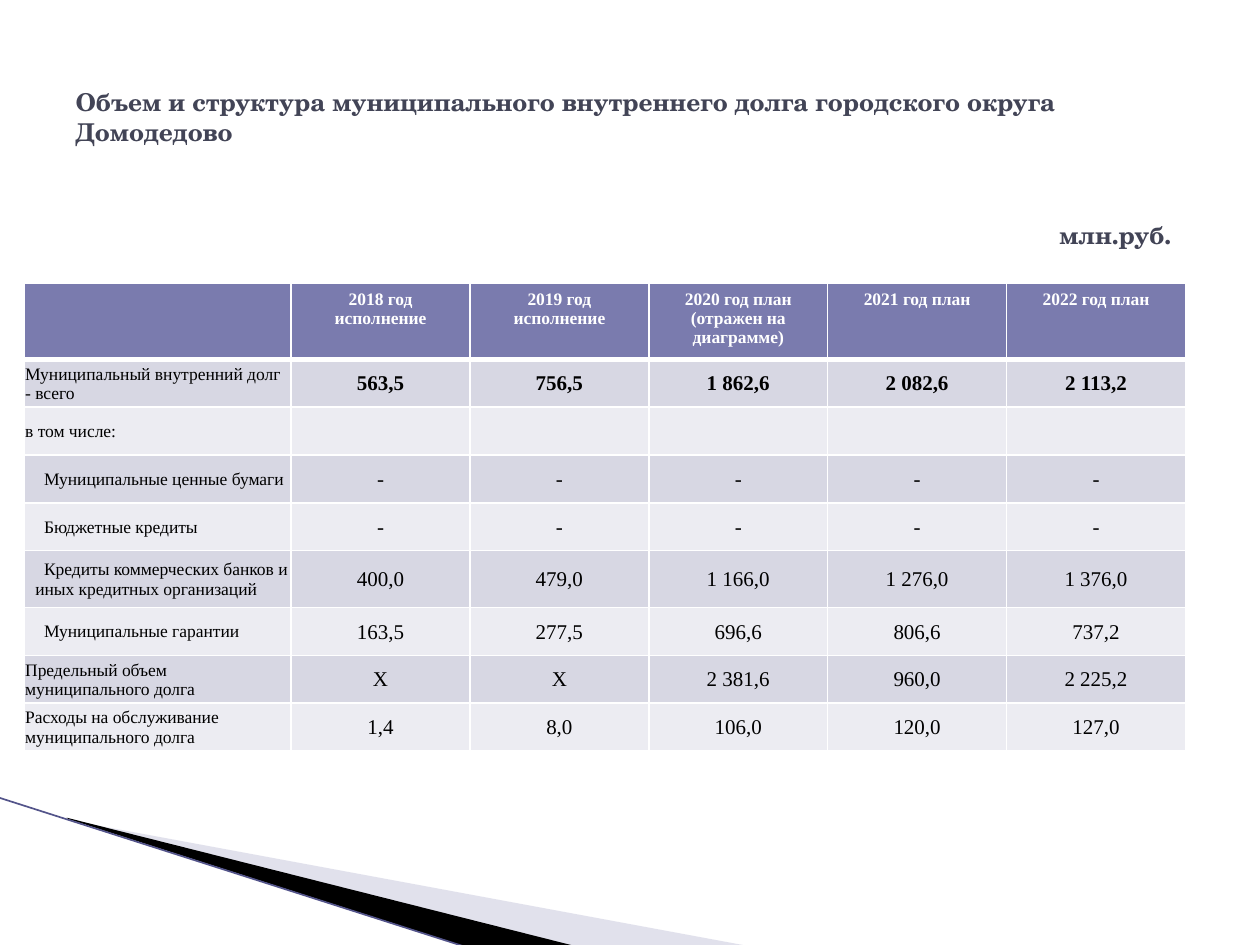
"""Build the slide on the municipal debt of the Domodedovo urban district."""
from dataclasses import dataclass

from lxml import etree
from pptx import Presentation
from pptx.dml.color import RGBColor
from pptx.enum.shapes import MSO_CONNECTOR
from pptx.enum.text import MSO_ANCHOR, MSO_AUTO_SIZE, PP_ALIGN
from pptx.oxml.ns import qn
from pptx.slide import Slide
from pptx.table import _Cell
from pptx.text.text import TextFrame
from pptx.util import Inches, Pt

LEFT, CENTER = PP_ALIGN.LEFT, PP_ALIGN.CENTER
TOP, MIDDLE = MSO_ANCHOR.TOP, MSO_ANCHOR.MIDDLE
NO_AUTOFIT, FIT_SHAPE = MSO_AUTO_SIZE.NONE, MSO_AUTO_SIZE.SHAPE_TO_FIT_TEXT
STRAIGHT = MSO_CONNECTOR.STRAIGHT

WHITE = RGBColor(0xFF, 0xFF, 0xFF)
BLACK = RGBColor(0x00, 0x00, 0x00)
SLATE = RGBColor(0x42, 0x44, 0x56)
HEADER = RGBColor(0x7A, 0x7B, 0xAE)
BANDS = (RGBColor(0xD7, 0xD7, 0xE3), RGBColor(0xEC, 0xEC, 0xF2))
LAVENDER = RGBColor(0xB6, 0xB6, 0xD1)
EDGE = RGBColor(0x53, 0x54, 0x8A)

HEADING_FONT, TABLE_FONT = "TeX Gyre Schola", "Times New Roman"
HEADING = {"name": HEADING_FONT, "size": Pt(14), "bold": True}
COLUMN_HEAD = {"name": TABLE_FONT, "size": Pt(10), "bold": True}
LABEL = {"name": TABLE_FONT, "size": Pt(10), "bold": False}
VALUE = {"name": TABLE_FONT, "size": Pt(12), "bold": False}
TOTAL = {"name": TABLE_FONT, "size": Pt(12), "bold": True}


@dataclass(frozen=True)
class DebtRow:
    label: str
    values: tuple[str, ...]
    indented: bool = False
    total: bool = False
    height: float = 0.38


@dataclass(frozen=True)
class Wedge:
    points: tuple[tuple[float, float], ...]
    color: RGBColor
    opacity: int = 100


YEARS = (
    "2018 год\nисполнение",
    "2019 год\nисполнение",
    "2020 год план\n(отражен на диаграмме)",
    "2021 год план",
    "2022 год план",
)
ROWS = (
    DebtRow("Муниципальный внутренний долг - всего",
            ("563,5", "756,5", "1 862,6", "2 082,6", "2 113,2"), total=True),
    DebtRow("в том числе:", ("",) * 5),
    DebtRow("Муниципальные ценные бумаги", ("-",) * 5, indented=True),
    DebtRow("Бюджетные кредиты", ("-",) * 5, indented=True),
    DebtRow("Кредиты коммерческих банков и иных кредитных организаций",
            ("400,0", "479,0", "1 166,0", "1 276,0", "1 376,0"), indented=True, height=0.45),
    DebtRow("Муниципальные гарантии",
            ("163,5", "277,5", "696,6", "806,6", "737,2"), indented=True),
    DebtRow("Предельный объем муниципального долга",
            ("X", "X", "2 381,6", "960,0", "2 225,2")),
    DebtRow("Расходы на обслуживание муниципального долга",
            ("1,4", "8,0", "106,0", "120,0", "127,0")),
)
HEADER_HEIGHT = 0.58
COLUMN_WIDTHS = (2.12,) + (1.42,) * len(YEARS)
WEDGES = (
    Wedge(((0.55, 6.51), (5.95, 7.51), (4.56, 7.51), (0.55, 6.5)), LAVENDER, 40),
    Wedge(((0.53, 6.49), (4.57, 7.51), (3.72, 7.52), (0.54, 6.5)), BLACK),
)


def write_text(frame: TextFrame, text: str, style: dict, color: RGBColor,
               alignment: PP_ALIGN = LEFT) -> None:
    """Fill a frame with one formatted paragraph per line."""
    frame.text = text
    for paragraph in frame.paragraphs:
        paragraph.alignment = alignment
        for run in paragraph.runs:
            for name, value in style.items():
                setattr(run.font, name, value)
            run.font.color.rgb = color


def style_cell(cell: _Cell, fill: RGBColor, top: float = 1, bottom: float = 1) -> None:
    """Give a cell its fill and white borders."""
    properties = cell._tc.get_or_add_tcPr()
    for side, width in {"L": 1, "R": 1, "T": top, "B": bottom}.items():
        border = etree.SubElement(properties, qn(f"a:ln{side}"), w=str(Pt(width)))
        solid = etree.SubElement(border, qn("a:solidFill"))
        etree.SubElement(solid, qn("a:srgbClr"), val=str(WHITE))
    cell.fill.solid()
    cell.fill.fore_color.rgb = fill


def set_body_margins(cell: _Cell, left: float = 0.01) -> None:
    """Centre a body cell vertically with narrow margins."""
    margins = {"left": left, "top": 0.01, "right": 0.01, "bottom": 0}
    for side, length in margins.items():
        setattr(cell, f"margin_{side}", Inches(length))
    cell.vertical_anchor = MIDDLE


def add_debt_table(slide: Slide) -> None:
    """Add the debt table with its header and banded rows."""
    heights = (HEADER_HEIGHT, *(row.height for row in ROWS))
    table = slide.shapes.add_table(
        len(heights), len(COLUMN_WIDTHS), Inches(0.19), Inches(2.25),
        Inches(sum(COLUMN_WIDTHS)), Inches(sum(heights))).table
    for column, width in zip(table.columns, COLUMN_WIDTHS):
        column.width = Inches(width)
    for table_row, height in zip(table.rows, heights):
        table_row.height = Inches(height)

    for index, year in enumerate(("", *YEARS)):
        cell = table.cell(0, index)
        style_cell(cell, HEADER, bottom=3)
        cell.vertical_anchor = TOP
        write_text(cell.text_frame, year, COLUMN_HEAD, WHITE, CENTER)

    for number, row in enumerate(ROWS, start=1):
        for index, text in enumerate((row.label, *row.values)):
            cell = table.cell(number, index)
            is_label = index == 0
            indented = is_label and row.indented
            style_cell(cell, BANDS[(number - 1) % 2], top=3 if number == 1 else 1)
            set_body_margins(cell, 0.09 if indented else 0.01)
            value_style = TOTAL if row.total else VALUE
            write_text(cell.text_frame, text, LABEL if is_label else value_style,
                       BLACK, LEFT if is_label else CENTER)
            if indented:
                properties = cell.text_frame.paragraphs[0]._p.get_or_add_pPr()
                properties.set("indent", str(Inches(0.07)))


def add_wedge(slide: Slide, wedge: Wedge) -> None:
    """Add one filled corner wedge."""
    start, *others = [(Inches(x), Inches(y)) for x, y in wedge.points]
    builder = slide.shapes.build_freeform(*start)
    builder.add_line_segments(others)
    shape = builder.convert_to_shape()
    shape.shadow.inherit = False
    shape.fill.solid()
    shape.fill.fore_color.rgb = wedge.color
    shape.line.fill.background()
    if wedge.opacity < 100:
        color = shape._element.spPr.find(f"{qn('a:solidFill')}/{qn('a:srgbClr')}")
        etree.SubElement(color, qn("a:alpha"), val=str(wedge.opacity * 1000))


def add_edge(slide: Slide) -> None:
    """Add the thin line along the corner wedges."""
    edge = slide.shapes.add_connector(
        STRAIGHT, Inches(-0.01), Inches(6.33), Inches(3.71), Inches(7.52))
    edge.line.color.rgb = EDGE
    edge.line.width = Pt(0.95)
    etree.SubElement(edge._element.spPr, qn("a:effectLst"))


def add_headings(slide: Slide) -> None:
    """Place the title and the unit of measure."""
    title = slide.shapes.title
    title.left, title.top = Inches(0.5), Inches(0.3)
    title.width, title.height = Inches(9), Inches(1.25)
    write_text(title.text_frame,
               "Объем и структура муниципального внутреннего долга городского округа Домодедово",
               HEADING, SLATE)
    title.text_frame.vertical_anchor = MIDDLE
    title.text_frame.auto_size = NO_AUTOFIT

    unit = slide.shapes.add_textbox(Inches(8.31), Inches(1.7), Inches(1.12), Inches(0.34))
    write_text(unit.text_frame, "млн.руб.", HEADING, SLATE)
    unit.text_frame.word_wrap = False
    unit.text_frame.auto_size = FIT_SHAPE


def main() -> None:
    """Build and save the presentation."""
    presentation = Presentation()
    presentation.slide_width, presentation.slide_height = Inches(10), Inches(7.5)
    slide = presentation.slides.add_slide(presentation.slide_layouts[5])
    for wedge in WEDGES:
        add_wedge(slide, wedge)
    add_edge(slide)
    add_headings(slide)
    add_debt_table(slide)
    presentation.save("out.pptx")


if __name__ == "__main__":
    main()
